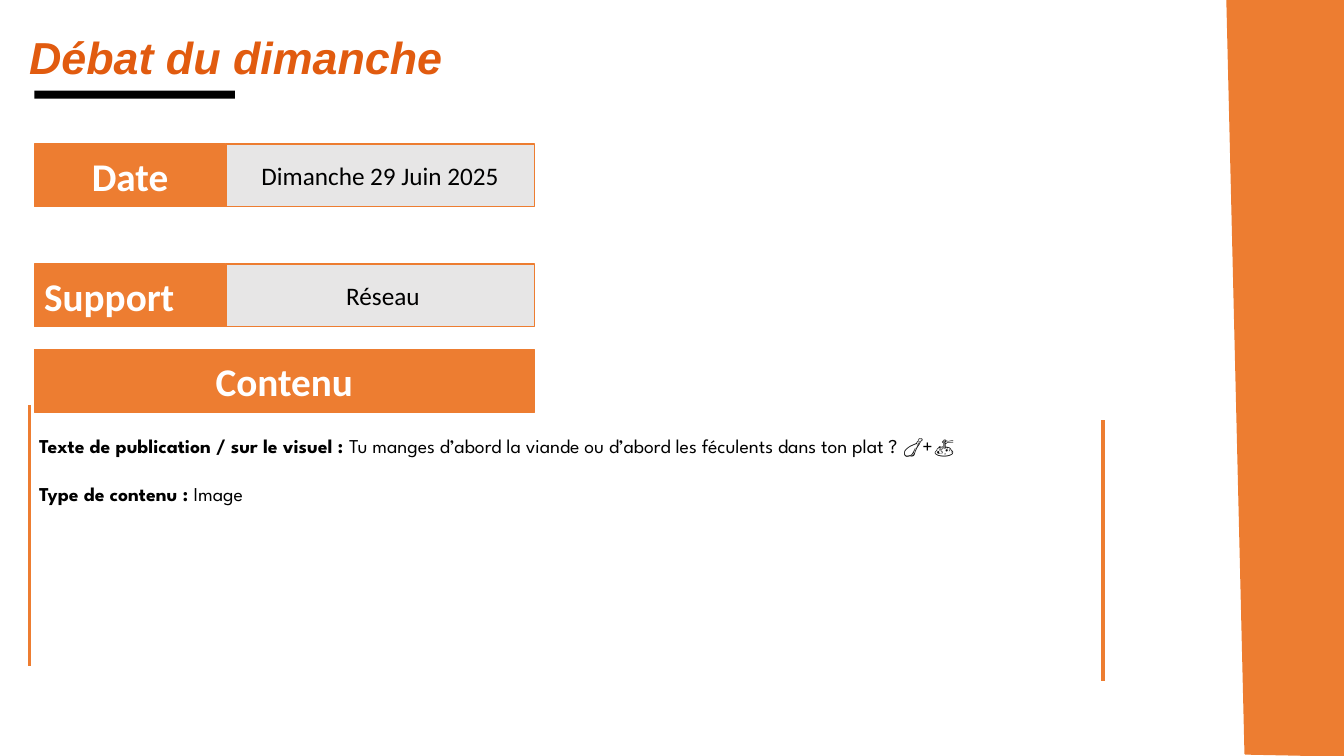
from dataclasses import dataclass

from lxml.etree import SubElement
from pptx import Presentation
from pptx.dml.color import RGBColor
from pptx.enum.shapes import MSO_CONNECTOR, MSO_SHAPE
from pptx.enum.text import MSO_ANCHOR, PP_ALIGN
from pptx.oxml.ns import qn
from pptx.util import Inches, Pt

ORANGE, TITLE_ORANGE = "ED7D31", "E15B0F"
GREY, BLACK, WHITE = "E7E6E6", "000000", "FFFFFF"
LEFT, LABEL_WIDTH, VALUE_WIDTH, BAR_HEIGHT = 0.34, 1.9, 3.06, 0.62


@dataclass
class Bar:
    text: str
    left: float
    top: float
    width: float
    fill: str = ORANGE
    color: str = WHITE
    size: int = 28
    bold: bool = True
    align: PP_ALIGN = PP_ALIGN.CENTER


@dataclass
class Field:
    label: str
    value: str
    top: float
    label_align: PP_ALIGN = PP_ALIGN.CENTER


@dataclass
class SideRule:
    left: float
    top: float
    height: float = 2.59


def rgb(color: str) -> RGBColor:
    return RGBColor.from_string(color)


def add_span(para, text: str, *, size: float, font: str = "Calibri",
             color: str = BLACK, bold: bool = False, italic: bool = False) -> None:
    span = para.add_run()
    span.text = text
    span.font.size = Pt(size)
    span.font.name = font
    span.font.bold = bold
    span.font.italic = italic
    span.font.color.rgb = rgb(color)


def paint(shape, fill: str, line: str | None = None) -> None:
    shape.shadow.inherit = False
    shape.fill.solid()
    shape.fill.fore_color.rgb = rgb(fill)
    if line:
        shape.line.color.rgb = rgb(line)
        shape.line.width = Pt(1)
    else:
        shape.line.fill.background()


def add_rectangle(page, left: float, top: float, width: float, height: float,
                  fill: str, line: str | None = None):
    box = page.shapes.add_shape(MSO_SHAPE.RECTANGLE, Inches(left), Inches(top),
                                Inches(width), Inches(height))
    paint(box, fill, line)
    return box


def add_bar(page, bar: Bar) -> None:
    box = add_rectangle(page, bar.left, bar.top, bar.width, BAR_HEIGHT, bar.fill, ORANGE)
    box.text_frame.vertical_anchor = MSO_ANCHOR.MIDDLE
    para = box.text_frame.paragraphs[0]
    para.alignment = bar.align
    add_span(para, bar.text, size=bar.size, color=bar.color, bold=bar.bold)


def add_field(page, field: Field) -> None:
    add_bar(page, Bar(field.label, LEFT, field.top, LABEL_WIDTH, align=field.label_align))
    add_bar(page, Bar(field.value, LEFT + LABEL_WIDTH, field.top, VALUE_WIDTH,
                      fill=GREY, color=BLACK, size=18, bold=False))


def add_side_rule(page, rule: SideRule) -> None:
    line = page.shapes.add_connector(
        MSO_CONNECTOR.STRAIGHT, Inches(rule.left), Inches(rule.top),
        Inches(rule.left), Inches(rule.top + rule.height))
    line.line.color.rgb = rgb(ORANGE)
    line.line.width = Pt(2.25)
    SubElement(line._element.spPr, qn("a:effectLst"))


def add_text_box(page, left: float, top: float, width: float, height: float):
    box = page.shapes.add_textbox(Inches(left), Inches(top), Inches(width), Inches(height))
    box.text_frame.word_wrap = True
    return box.text_frame


def add_side_panel(page) -> None:
    corners = [(12.17, 0), (13.33, 0), (13.34, 7.5), (12.35, 7.48)]
    points = [(Inches(x), Inches(y)) for x, y in corners]
    builder = page.shapes.build_freeform(*points[0], scale=1.0)
    builder.add_line_segments(points[1:], close=True)
    paint(builder.convert_to_shape(), ORANGE, ORANGE)


def main() -> None:
    deck = Presentation()
    deck.slide_width, deck.slide_height = Inches(13.33), Inches(7.5)
    page = deck.slides.add_slide(deck.slide_layouts[6])

    # Decoration
    add_side_panel(page)
    add_rectangle(page, LEFT, 0.9, 1.99, 0.08, BLACK)
    for rule in (SideRule(0.29, 4.02), SideRule(10.94, 4.17)):
        add_side_rule(page, rule)

    # Labelled fields and content heading
    for field in (Field("Date", "Dimanche 29 Juin 2025", 1.43),
                  Field("Support", " Réseau", 2.62, PP_ALIGN.LEFT)):
        add_field(page, field)
    add_bar(page, Bar("Contenu", LEFT, 3.47, LABEL_WIDTH + VALUE_WIDTH))

    # Content details
    details = {
        "Texte de publication / sur le visuel : ":
            "Tu manges d’abord la viande ou d’abord les féculents dans ton plat ? 🍗+🍝",
        "Type de contenu : ": "Image",
    }
    frame = add_text_box(page, 0.29, 4.26, 10.82, 1.04)
    for index, (label, text) in enumerate(details.items()):
        para = frame.add_paragraph() if index else frame.paragraphs[0]
        para.space_before = Pt(17 if index else 0)
        add_span(para, label, size=14, font="League Spartan", bold=True)
        add_span(para, text, size=14, font="League Spartan")

    # Title
    title = add_text_box(page, 0.19, 0.25, 11.03, 0.52).paragraphs[0]
    title.alignment = PP_ALIGN.JUSTIFY
    add_span(title, "Débat du dimanche", size=32, font="Arial",
             color=TITLE_ORANGE, bold=True, italic=True)

    deck.save("out.pptx")


if __name__ == "__main__":
    main()
